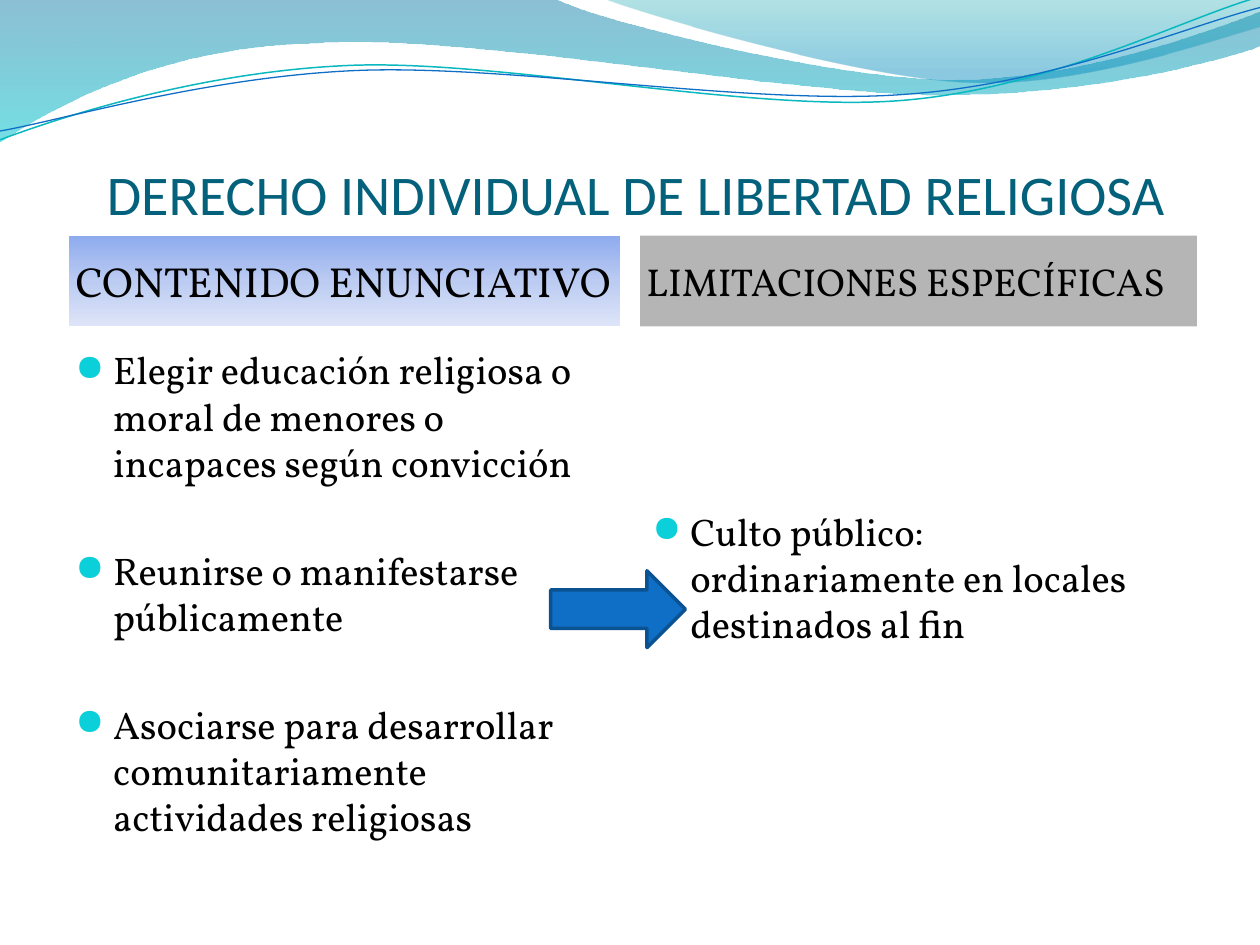
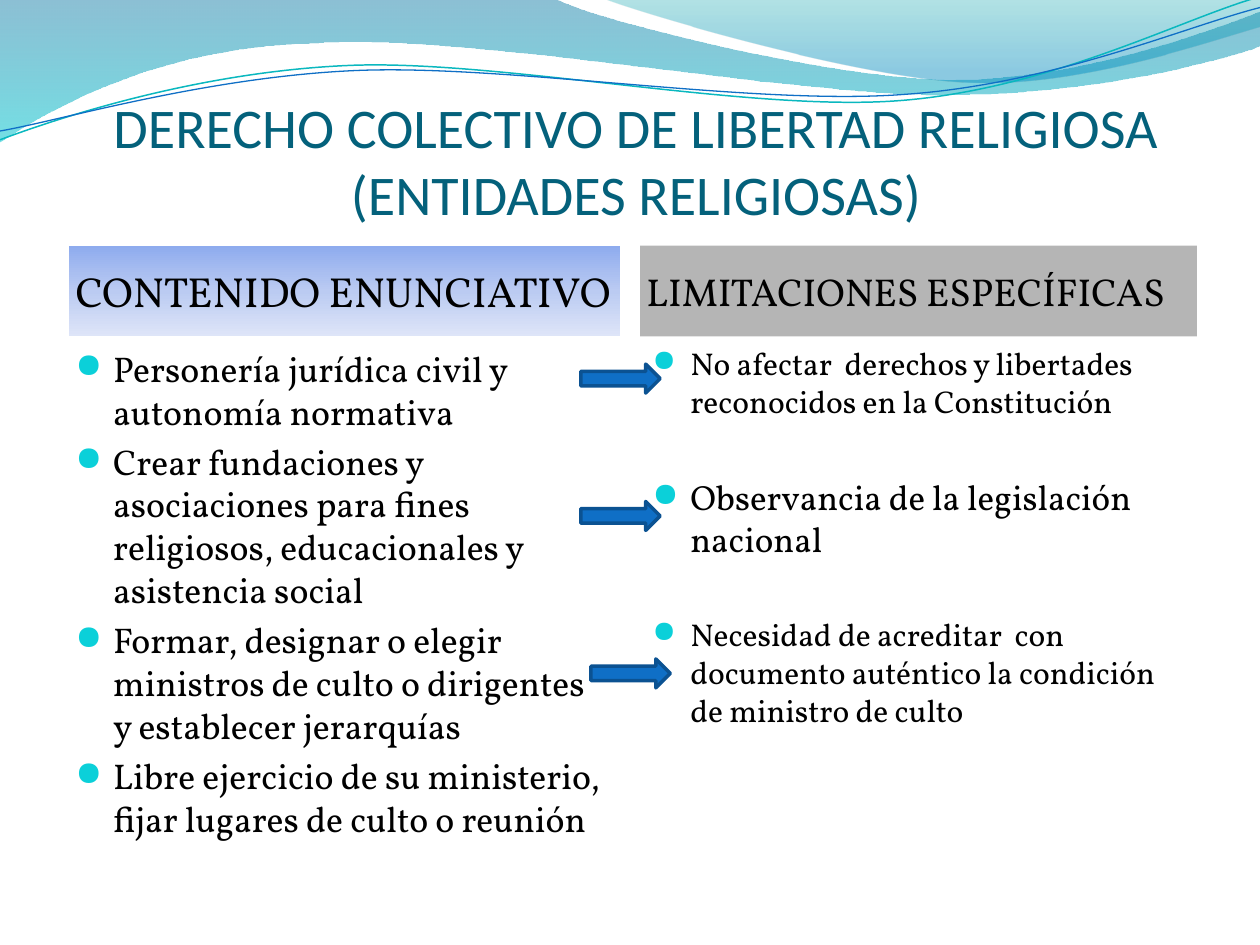
from lxml.etree import SubElement
from pptx import Presentation
from pptx.dml.color import RGBColor
from pptx.enum.shapes import MSO_SHAPE
from pptx.enum.text import MSO_ANCHOR, PP_ALIGN
from pptx.oxml.ns import qn
from pptx.util import Inches, Pt

HUES = {
    "title": "04617B",
    "text": "000000",
    "dot": "0BD0D9",
    "arrow": "0F6FC6",
    "edge": "0B5292",
    "teal": "0AB8BF",
    "blue": "0F6FC6",
    "gray": "000000",
}
FADES = {
    "head": [(0, "8EABEE", 100), (50, "BBCBF2", 100), (100, "DEE5F8", 100)],
    "wide": [(0, "0074A1", 45), (100, "00C6CF", 55)],
    "short": [(0, "00A1A9", 30), (80, "008BBF", 45)],
}
HEAD = "Calibri"
BODY = "Vollkorn"

WAVES = [
    ("wide", [(0, 0), (4.4, -0.01), (4.76, 0.17, 6.64, 0.63, 7.58, 0.63),
              (8.53, 0.63, 9.58, 0.26, 10, 0.09), (10.01, 0.36),
              (9.83, 0.44, 8.7, 0.76, 7.46, 0.75),
              (6.22, 0.75, 3.82, 0.28, 2.57, 0.34),
              (1.29, 0.36, 0.46, 0.83, -0.01, 1.13), (0, 0)]),
    ("short", [(4.79, -0.01), (5.09, 0.11, 6.82, 0.62, 7.69, 0.65),
               (8.56, 0.69, 9.61, 0.32, 10, 0.21), (10, 0), (4.79, -0.01)]),
]
CURVES = [
    ("teal", 0.85, [(0, 1.11), (0.48, 0.93, 1.58, 0.57, 2.77, 0.52),
                    (3.95, 0.47, 5.93, 0.89, 7.13, 0.8),
                    (8.33, 0.71, 9.38, 0.15, 9.98, -0.02)]),
    ("blue", 0.75, [(0, 1.04), (0.47, 0.96, 1.64, 0.61, 2.83, 0.56),
                    (4.03, 0.51, 5.97, 0.84, 7.17, 0.75),
                    (8.36, 0.67, 9.41, 0.21, 10, 0.06)]),
]


def tint(hue):
    return RGBColor.from_string(HUES[hue])


def fade(fill, stops):
    fill.gradient()
    fill.gradient_angle = 270
    nodes = fill._xPr.find(qn("a:gradFill")).find(qn("a:gsLst"))
    nodes.clear()
    for place, hue, alpha in stops:
        node = SubElement(nodes, qn("a:gs"), pos=str(place * 1000))
        clear(SubElement(node, qn("a:srgbClr"), val=hue), alpha)


def clear(node, alpha):
    if alpha < 100:
        SubElement(node, qn("a:alpha"), val=str(alpha * 1000))


def bend(shape, parts):
    lines = iter(list(shape._element.iter(qn("a:lnTo"))))
    for part in parts:
        line = next(lines)
        if len(part) == 6:
            curve = line.makeelement(qn("a:cubicBezTo"))
            line.addprevious(curve)
            for item in (line, next(lines), next(lines)):
                curve.append(item[0])
                item.getparent().remove(item)


def draw(slide, path, close):
    points = [(Inches(part[i]), Inches(part[i + 1]))
              for part in path for i in range(0, len(part), 2)]
    pen = slide.shapes.build_freeform(*points[0])
    pen.add_line_segments(points[1:], close=close)
    shape = pen.convert_to_shape()
    bend(shape, path[1:])
    shape.shadow.inherit = False
    return shape


def add_waves(slide):
    for name, path in WAVES:
        shape = draw(slide, path, True)
        fade(shape.fill, FADES[name])
        shape.line.fill.background()
    for hue, width, path in CURVES:
        shape = draw(slide, path, False)
        shape.fill.background()
        shape.line.color.rgb = tint(hue)
        shape.line.width = Pt(width)


def set_frame(frame, anchor, left, top, right, base):
    frame.word_wrap = True
    frame.vertical_anchor = anchor
    frame.margin_left, frame.margin_top = Inches(left), Inches(top)
    frame.margin_right, frame.margin_bottom = Inches(right), Inches(base)


def style(para, size, font=BODY, hue="text", align=PP_ALIGN.LEFT):
    para.alignment = align
    for run in para.runs:
        run.font.size = Pt(size)
        run.font.name = font
        run.font.color.rgb = tint(hue)


def add_title(slide, text):
    box = slide.shapes.add_textbox(Inches(0.55), Inches(0.55), Inches(9), Inches(1.25))
    frame = box.text_frame
    set_frame(frame, MSO_ANCHOR.BOTTOM, 0, 0.05, 0, 0)
    frame.text = text
    style(frame.paragraphs[0], 32, HEAD, "title", PP_ALIGN.CENTER)


def add_band(slide, text, left, top, width, size):
    band = slide.shapes.add_shape(MSO_SHAPE.RECTANGLE, Inches(left), Inches(top),
                                  Inches(width), Inches(0.72))
    band.shadow.inherit = False
    band.line.fill.background()
    set_frame(band.text_frame, MSO_ANCHOR.MIDDLE, 0.05, 0, 0, 0)
    band.text_frame.text = text
    style(band.text_frame.paragraphs[0], size)
    return band


def add_heads(slide, top):
    band = add_band(slide, "CONTENIDO ENUNCIATIVO", 0.55, top, 4.37, 24)
    fade(band.fill, FADES["head"])
    band = add_band(slide, "LIMITACIONES ESPECÍFICAS", 5.08, top, 4.42, 22.2)
    band.fill.solid()
    band.fill.fore_color.rgb = tint("gray")
    clear(band.fill._xPr.find(qn("a:solidFill"))[0], 29)


def add_dot(para):
    props = para._p.get_or_add_pPr()
    props.set("marL", str(Inches(0.3)))
    props.set("indent", str(Inches(-0.3)))
    SubElement(SubElement(props, qn("a:buClr")), qn("a:srgbClr"), val=HUES["dot"])
    SubElement(props, qn("a:buSzPct"), val="95000")
    SubElement(props, qn("a:buFont"), typeface="OpenSymbol")
    SubElement(props, qn("a:buChar"), char="●")


def add_list(slide, left, top, items, inset=0):
    box = slide.shapes.add_textbox(Inches(left), Inches(top), Inches(4.42), Inches(4.21))
    frame = box.text_frame
    set_frame(frame, MSO_ANCHOR.TOP, 0.1, inset, 0.1, 0.05)
    for place, (text, size, gap) in enumerate(items):
        para = frame.add_paragraph() if place else frame.paragraphs[0]
        para.text = text
        style(para, size)
        para.space_before = Pt(0.2 * size + gap)
        add_dot(para)


def add_arrow(slide, left, top, width, height):
    arrow = slide.shapes.add_shape(MSO_SHAPE.RIGHT_ARROW, Inches(left), Inches(top),
                                   Inches(width), Inches(height))
    arrow.shadow.inherit = False
    arrow.fill.solid()
    arrow.fill.fore_color.rgb = tint("arrow")
    arrow.line.color.rgb = tint("edge")
    arrow.line.width = Pt(2)


def add_slide(deck, title, top):
    slide = deck.slides.add_slide(deck.slide_layouts[6])
    add_waves(slide)
    add_title(slide, title)
    add_heads(slide, top)
    return slide


def main():
    deck = Presentation()
    deck.slide_width, deck.slide_height = Inches(10), Inches(7.5)

    slide = add_slide(deck, "DERECHO INDIVIDUAL DE LIBERTAD RELIGIOSA", 1.87)
    add_list(slide, 0.5, 2.75, [
        ("Elegir educación religiosa o moral de menores o incapaces según convicción", 22, 0),
        ("Reunirse o manifestarse públicamente", 22, 30.8),
        ("Asociarse para desarrollar comunitariamente actividades religiosas", 22, 30.8),
    ])
    add_list(slide, 5.08, 2.75, [
        ("Culto público: ordinariamente en locales destinados al fin", 22, 0),
    ], 1.28)
    add_arrow(slide, 4.37, 4.53, 1.07, 0.61)

    slide = add_slide(
        deck, "DERECHO COLECTIVO DE LIBERTAD RELIGIOSA (ENTIDADES RELIGIOSAS)", 1.95)
    rights = [
        "Personería jurídica civil y autonomía normativa",
        "Crear fundaciones y asociaciones para fines religiosos, educacionales "
        "y asistencia social",
        "Formar, designar o elegir ministros de culto o dirigentes "
        "y establecer jerarquías",
        "Libre ejercicio de su ministerio, fijar lugares de culto o reunión",
    ]
    add_list(slide, 0.5, 2.75, [(text, 20.4, 0) for text in rights])
    add_list(slide, 5.08, 2.73, [
        ("No afectar  derechos y libertades reconocidos en la Constitución", 18, 0),
        ("Observancia de la legislación nacional", 20, 28),
        ("Necesidad de acreditar  con documento auténtico la condición "
         "de ministro de culto", 18, 28),
    ])
    for left, top in [(4.61, 2.89), (4.61, 3.98), (4.69, 5.23)]:
        add_arrow(slide, left, top, 0.63, 0.23)

    deck.save("out.pptx")


if __name__ == "__main__":
    main()
